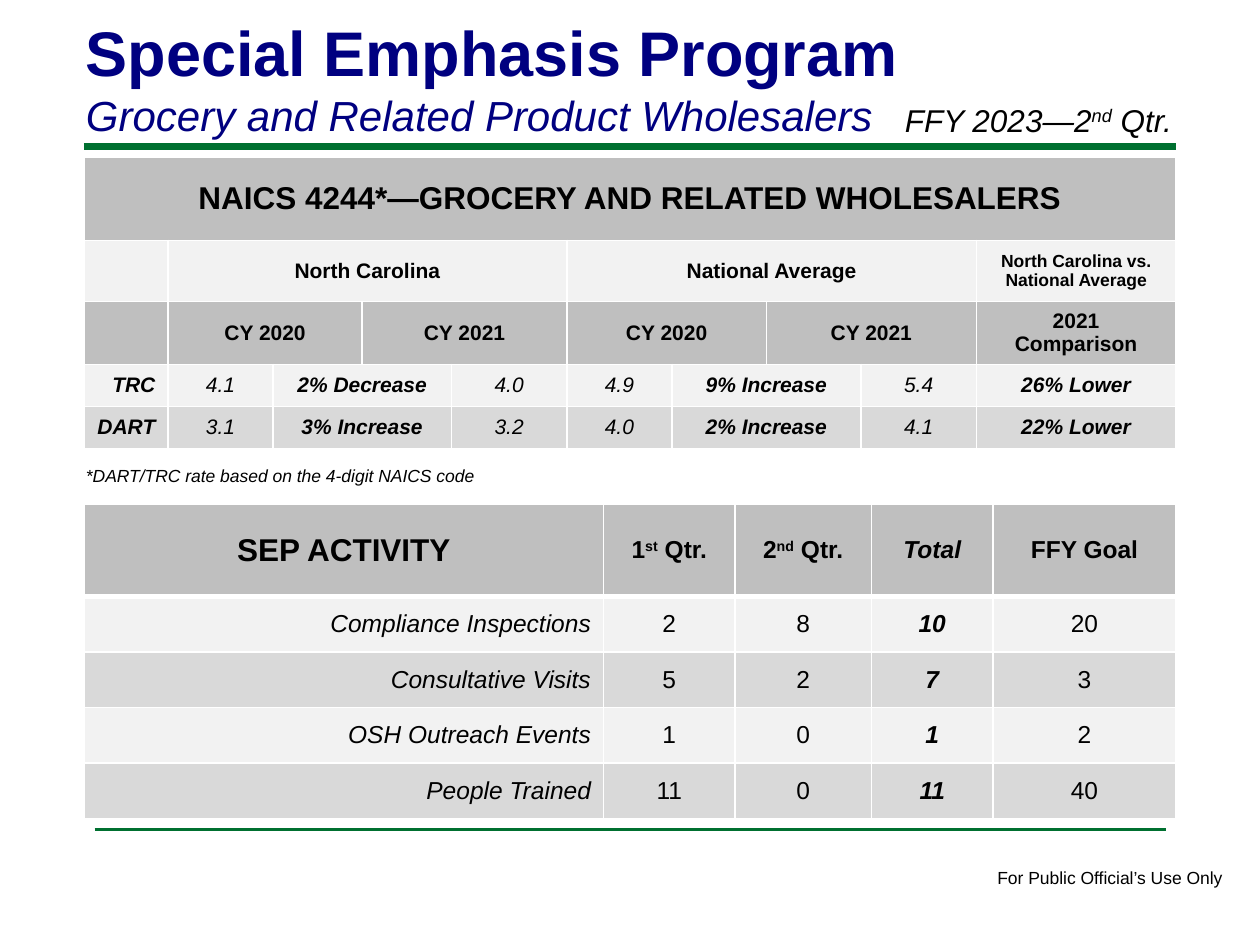
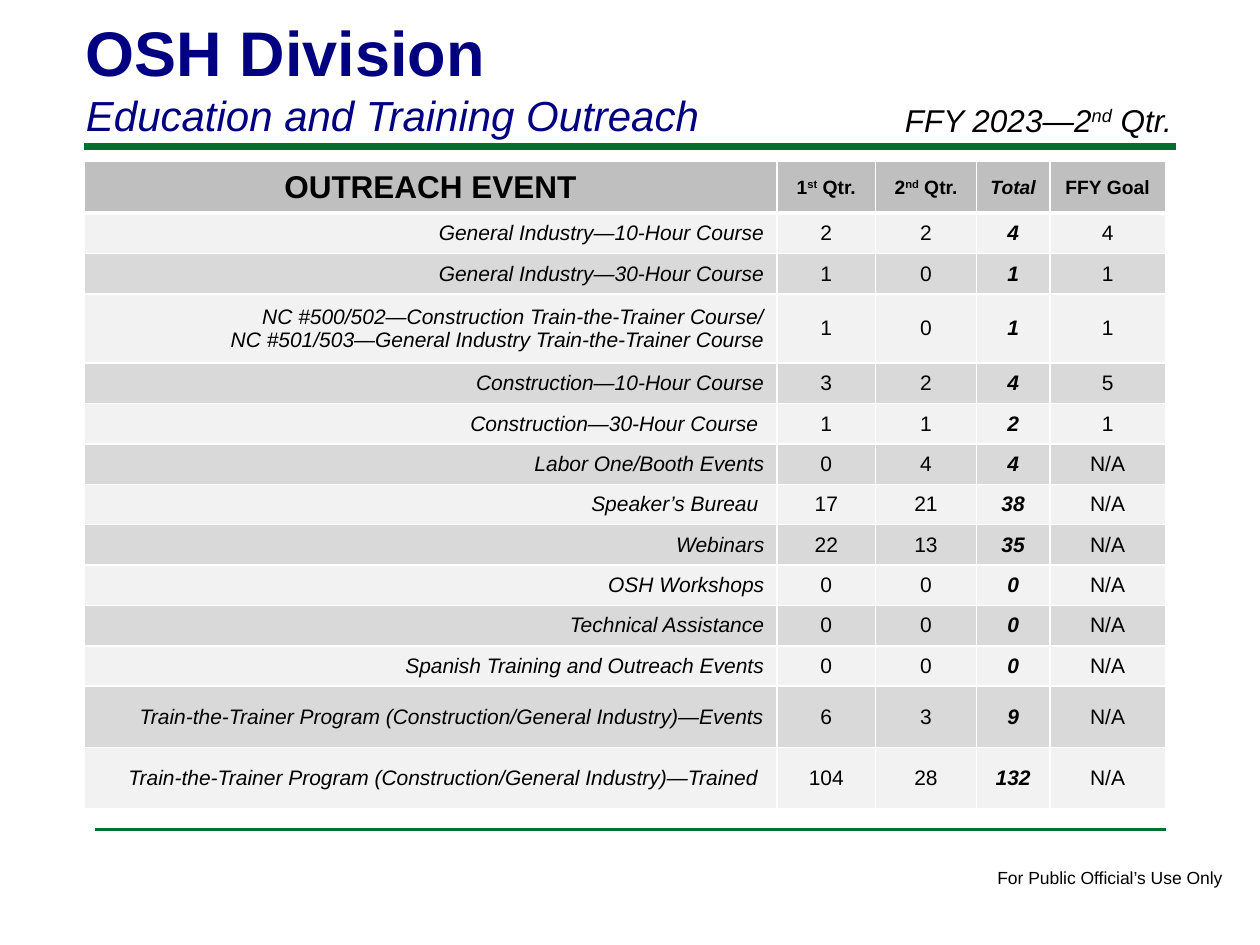
from dataclasses import dataclass, replace
from lxml.etree import SubElement
from pptx import Presentation
from pptx.dml.color import RGBColor
from pptx.enum.shapes import MSO_CONNECTOR
from pptx.enum.text import MSO_ANCHOR, MSO_AUTO_SIZE, PP_ALIGN
from pptx.oxml import parse_xml
from pptx.oxml.ns import nsdecls, qn
from pptx.util import Inches, Pt


@dataclass(frozen=True)
class Theme:
    font: str = "Arial"
    navy: str = "000080"
    green: str = "007030"
    black: str = "000000"
    header: str = "BFBFBF"
    light: str = "F2F2F2"
    dark: str = "D9D9D9"
    border: str = "FFFFFF"
    title: int = 36
    subtitle: int = 24
    heading: int = 18
    large: int = 14
    body: int = 12
    compact: int = 11
    small: int = 10

    def band(self, index):
        return self.dark if index % 2 else self.light


THEME = Theme()


@dataclass(frozen=True)
class TextStyle:
    size: int
    bold: bool = False
    italic: bool = False
    color: str = THEME.black
    align: PP_ALIGN = PP_ALIGN.LEFT


CENTERED = TextStyle(THEME.body, align=PP_ALIGN.CENTER)
STRONG = replace(CENTERED, bold=True)
HEADING = replace(STRONG, size=THEME.heading)

QUARTER_HEADERS = ["1^st^ Qtr.", "2^nd^ Qtr.", "Total", "FFY Goal"]
TOTAL_COLUMN = 3

SEP_ACTIVITY = [
    ("Compliance Inspections", 2, 8, 10, 20),
    ("Consultative Visits", 5, 2, 7, 3),
    ("OSH Outreach Events", 1, 0, 1, 2),
    ("People Trained", 11, 0, 11, 40),
]

OUTREACH_EVENTS = [
    ("General Industry—10-Hour Course", 2, 2, 4, 4),
    ("General Industry—30-Hour Course", 1, 0, 1, 1),
    ("NC #500/502—Construction Train-the-Trainer Course/\n"
     "NC #501/503—General Industry Train-the-Trainer Course", 1, 0, 1, 1),
    ("Construction—10-Hour Course", 3, 2, 4, 5),
    ("Construction—30-Hour Course ", 1, 1, 2, 1),
    ("Labor One/Booth Events", 0, 4, 4, "N/A"),
    ("Speaker’s Bureau ", 17, 21, 38, "N/A"),
    ("Webinars", 22, 13, 35, "N/A"),
    ("OSH Workshops", 0, 0, 0, "N/A"),
    ("Technical Assistance", 0, 0, 0, "N/A"),
    ("Spanish Training and Outreach Events", 0, 0, 0, "N/A"),
    ("Train-the-Trainer Program (Construction/General Industry)—Events", 6, 3, 9, "N/A"),
    ("Train-the-Trainer Program (Construction/General Industry)—Trained ", 104, 28, 132, "N/A"),
]

INJURY_RATES = [
    ("TRC", "4.1", "2% Decrease", "4.0", "4.9", "9% Increase", "5.4", "26% Lower"),
    ("DART", "3.1", "3% Increase", "3.2", "4.0", "2% Increase", "4.1", "22% Lower"),
]


def grid(units):
    """Length of grid units; the slide is 120 columns by 90 rows."""
    return Inches(units / 12)


def add_paragraph_text(para, text, style):
    """Write text run by run; parts between carets are superscript."""
    para.alignment = style.align
    for index, part in enumerate(text.split("^")):
        span = para.add_run()
        span.text = part
        font = span.font
        font.name, font.size = THEME.font, Pt(style.size)
        font.bold, font.italic = style.bold, style.italic
        font.color.rgb = RGBColor.from_string(style.color)
        if index % 2:
            span._r.get_or_add_rPr().set("baseline", "30000")


def write(frame, lines):
    """Fill a text frame with (text, style) paragraphs."""
    for index, (text, style) in enumerate(lines):
        para = frame.add_paragraph() if index else frame.paragraphs[0]
        add_paragraph_text(para, text, style)


def add_text(page, left, top, width, height, *lines, wrap=True):
    box = page.shapes.add_textbox(*map(grid, (left, top, width, height)))
    box.text_frame.word_wrap = wrap
    box.text_frame.auto_size = MSO_AUTO_SIZE.SHAPE_TO_FIT_TEXT
    write(box.text_frame, lines)


def add_rule(page, left, right, top, weight):
    rule = page.shapes.add_connector(
        MSO_CONNECTOR.STRAIGHT, grid(left), grid(top), grid(right), grid(top))
    rule.line.color.rgb = RGBColor.from_string(THEME.green)
    rule.line.width = Pt(weight)
    SubElement(rule._element.spPr, qn("a:effectLst"))


def set_borders(cell, weights):
    """Draw cell borders from a side-to-points mapping in L, R, T, B order."""
    properties = cell._tc.get_or_add_tcPr()
    for index, (side, weight) in enumerate(weights.items()):
        properties.insert(index, parse_xml(
            f'<a:ln{side} {nsdecls("a")} w="{Pt(weight)}"><a:solidFill>'
            f'<a:srgbClr val="{THEME.border}"/></a:solidFill></a:ln{side}>'))


def add_table(page, left, top, columns, rows, fills, header_border=1):
    frame = page.shapes.add_table(
        len(rows), len(columns), grid(left), grid(top), grid(sum(columns)), grid(sum(rows)))
    table = frame.table
    table.first_row = table.horz_banding = False
    for column, width in zip(table.columns, columns):
        column.width = grid(width)
    for index, (row, height) in enumerate(zip(table.rows, rows)):
        row.height = grid(height)
        for cell in row.cells:
            cell.fill.solid()
            cell.fill.fore_color.rgb = RGBColor.from_string(fills[index])
            cell.vertical_anchor = MSO_ANCHOR.MIDDLE
            weights = {"L": 1, "R": 1}
            if index == 0:
                weights["T"] = 1
            weights["B"] = 1 if index else header_border
            set_borders(cell, weights)
    return table


def fill_row(table, row, entries):
    """Write (text, style, column span) entries from left to right."""
    column = 0
    for text, style, width in entries:
        cell = table.cell(row, column)
        if width > 1:
            cell.merge(table.cell(row, column + width - 1))
        if text:
            write(cell.text_frame, [(line, style) for line in text.split("\n")])
        column += width


def add_activity_table(page, top, heading, records, columns, rows, header_size, body_size):
    """Table of quarterly counts, with right-aligned labels and strong totals."""
    fills = [THEME.header] + [THEME.band(index) for index in range(len(records))]
    table = add_table(page, 8, top, columns, rows, fills, header_border=3)
    header = replace(STRONG, size=header_size)
    number = replace(CENTERED, size=body_size)
    label = replace(number, italic=True, align=PP_ALIGN.RIGHT)

    entries = [(heading, HEADING, 1)]
    for column, text in enumerate(QUARTER_HEADERS, start=1):
        entries.append((text, replace(header, italic=column == TOTAL_COLUMN), 1))
    fill_row(table, 0, entries)

    for row, (name, *counts) in enumerate(records, start=1):
        entries = [(name, label, 1)]
        for column, count in enumerate(counts, start=1):
            is_total = column == TOTAL_COLUMN
            entries.append((str(count), replace(number, bold=is_total, italic=is_total), 1))
        fill_row(table, row, entries)


def add_rates_table(page):
    fills = [THEME.header, THEME.light, THEME.header, THEME.light, THEME.dark]
    table = add_table(page, 8, 15, [8, 10, 8.5, 8.5, 11, 10, 9, 9, 11, 19],
                      [7.9, 5.8, 5.85, 4, 4], fills)
    fill_row(table, 0, [("NAICS 4244*—GROCERY AND RELATED WHOLESALERS", HEADING, 10)])
    fill_row(table, 1, [
        ("", STRONG, 1), ("North Carolina", STRONG, 4), ("National Average", STRONG, 4),
        ("North Carolina vs. National Average", replace(STRONG, size=THEME.small), 1)])
    years = [("CY 2020", STRONG, 2), ("CY 2021", STRONG, 2)]
    fill_row(table, 2, [("", STRONG, 1), *years, *years, ("2021 Comparison", STRONG, 1)])

    rate = replace(CENTERED, italic=True)
    change = replace(rate, bold=True)
    label = replace(change, align=PP_ALIGN.RIGHT)
    styles = [label, rate, change, rate, rate, change, rate, change]
    spans = [1, 1, 2, 1, 1, 2, 1, 1]
    for row, rates in enumerate(INJURY_RATES, start=3):
        fill_row(table, row, zip(rates, styles, spans))


def add_page(deck, title, subtitle):
    """Blank page with the shared title, period, rules and footer."""
    page = deck.slides.add_slide(deck.slide_layouts[6])
    add_rule(page, 8, 112, 14, 4)
    add_rule(page, 9, 111, 79, 2)
    add_text(page, 93.8, 82, 24.1, 3.2,
             ("For Public Official’s Use Only", TextStyle(THEME.small)), wrap=False)
    add_text(page, 7, 0.7, 99, 13.3,
             (title, TextStyle(THEME.title, bold=True, color=THEME.navy)),
             (subtitle, TextStyle(THEME.subtitle, italic=True, color=THEME.navy)))
    add_text(page, 85, 9, 30, 4.8,
             ("FFY 2023—2^nd^ Qtr.", TextStyle(THEME.heading, italic=True)))
    return page


def add_emphasis_page(deck):
    page = add_page(deck, "Special Emphasis Program", "Grocery and Related Product Wholesalers")
    add_rates_table(page)
    add_text(page, 7, 43.7, 40.4, 3.2,
             ("*DART/TRC rate based on the 4-digit NAICS code",
              TextStyle(THEME.small, italic=True)))
    add_activity_table(page, 48, "SEP ACTIVITY", SEP_ACTIVITY,
                       [49.5, 12.5, 13, 11.6, 17.4], [8.8] + [5.3] * 4,
                       THEME.large, THEME.large)


def add_outreach_page(deck):
    page = add_page(deck, "OSH Division", "Education and Training Outreach")
    rows = [4.9] + [3.85] * 2 + [6.6] + [3.85] * 8 + [5.85] * 2
    add_activity_table(page, 15.4, "OUTREACH EVENT", OUTREACH_EVENTS,
                       [66, 9.4, 9.6, 7, 11], rows, THEME.compact, THEME.body)


def main():
    deck = Presentation()
    deck.slide_width, deck.slide_height = grid(120), grid(90)
    add_emphasis_page(deck)
    add_outreach_page(deck)
    deck.save("out.pptx")


if __name__ == "__main__":
    main()
